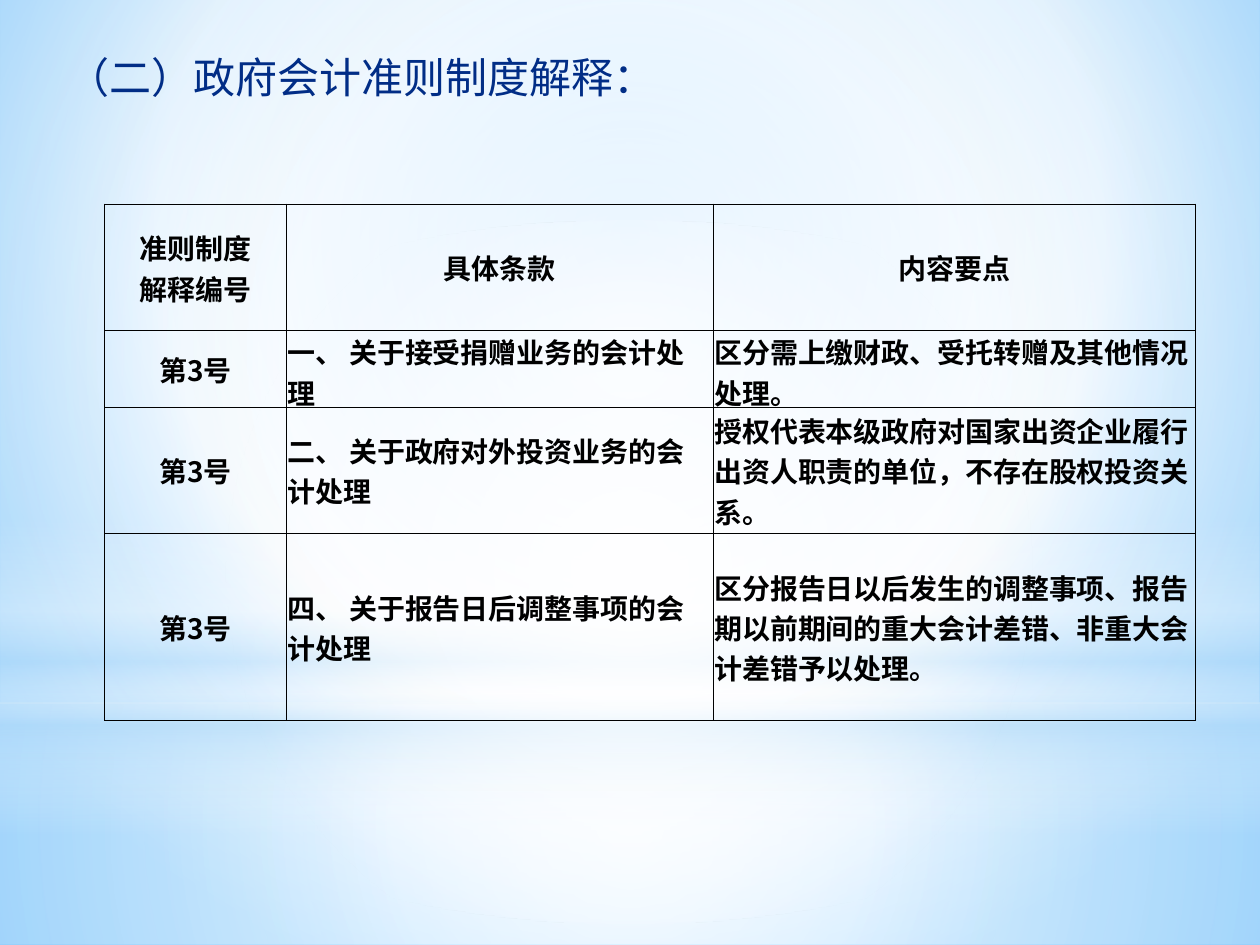
from dataclasses import dataclass

import pptx
import pptx.dml.color
import pptx.enum.shapes
import pptx.enum.text
import pptx.oxml
import pptx.oxml.ns
import pptx.util

WIDTH, HEIGHT = 10, 7.5
FONT = "Noto Sans CJK SC"
COLORS = {
    "white": "FFFFFF", "haze": "B4DCFA", "sky": "9ED5FF", "edge": "5BB9FF",
    "title_top": "012D86", "title_bottom": "0E2557", "ink": "000000",
}
SHAPE = pptx.enum.shapes.MSO_SHAPE
ALIGN = pptx.enum.text.PP_ALIGN
qn = pptx.oxml.ns.qn
NS = pptx.oxml.ns.nsdecls("a")
CENTER = (50, 50, 50, 50)


@dataclass
class Stop:
    position: int
    color: str
    alpha: int = 100


@dataclass
class Gradient:
    """Linear at an angle, or circular when a focus (left, top, right, bottom) is given."""
    stops: list[Stop]
    angle: int = 90
    focus: tuple[int, int, int, int] | None = None


@dataclass
class Glow:
    """A backdrop layer across the slide; top and height are shares of its height."""
    kind: int
    top: float
    height: float
    gradient: Gradient


HORIZON = 0.744
BACKGROUND = Gradient([Stop(0, "sky"), Stop(60, "white"), Stop(100, "edge")],
                      focus=(20, 10, 20, 60))
GLOWS = [
    Glow(SHAPE.RECTANGLE, HORIZON, 1 - HORIZON, Gradient(
        [Stop(0, "white", 91), Stop(37, "white", 76), Stop(100, "haze", 79)], focus=CENTER)),
    Glow(SHAPE.RECTANGLE, 0, HORIZON, Gradient(
        [Stop(0, "white", 89), Stop(48, "white", 62), Stop(100, "haze", 79)], focus=CENTER)),
    Glow(SHAPE.RECTANGLE, 0.55, 1 / 3, Gradient(
        [Stop(0, "white", 0), Stop(29, "white", 30), Stop(45, "haze", 40),
         Stop(55, "white", 26), Stop(65, "haze", 60), Stop(100, "white", 0)])),
    Glow(SHAPE.OVAL, 0.233, HORIZON, Gradient(
        [Stop(0, "white"), Stop(56, "white", 0)], focus=CENTER)),
]
TITLE_GRADIENT = Gradient([Stop(0, "title_top"), Stop(100, "title_bottom")])

COLUMNS = [1.44, 3.39, 3.83]
ROWS = [1, 0.61, 1, 1.49]
CELLS = [
    ["准则制度\n解释编号", "具体条款", "内容要点"],
    ["第3号", "一、 关于接受捐赠业务的会计处理",
     "区分需上缴财政、受托转赠及其他情况处理。"],
    ["第3号", "二、 关于政府对外投资业务的会计处理",
     "授权代表本级政府对国家出资企业履行出资人职责的单位，不存在股权投资关系。"],
    ["第3号", "四、 关于报告日后调整事项的会计处理",
     "区分报告日以后发生的调整事项、报告\n期以前期间的重大会计差错、非重大会计差错予以处理。"],
]


def inches(value: float) -> int:
    return pptx.util.Inches(value)


def set_gradient(parent, gradient: Gradient) -> None:
    """Swap the noFill of a properties element for a gradient."""
    stops = "".join(
        f'<a:gs pos="{s.position * 1000}"><a:srgbClr val="{COLORS[s.color]}">'
        f'<a:alpha val="{s.alpha * 1000}"/></a:srgbClr></a:gs>' for s in gradient.stops)
    if gradient.focus:
        sides = " ".join(f'{side}="{share * 1000}"'
                         for side, share in zip("ltrb", gradient.focus))
        shade = f'<a:path path="circle"><a:fillToRect {sides}/></a:path>'
    else:
        shade = f'<a:lin ang="{gradient.angle * 60000}" scaled="0"/>'
    fill = pptx.oxml.parse_xml(
        f'<a:gradFill {NS} rotWithShape="1"><a:gsLst>{stops}</a:gsLst>{shade}</a:gradFill>')
    parent.replace(parent.find(qn("a:noFill")), fill)


def set_font(p, size: int):
    """Set size and typeface for Latin and East Asian text; return the properties element."""
    p.font.size = pptx.util.Pt(size)
    p.font.name = FONT
    props = p._p.pPr.find(qn("a:defRPr"))
    props.append(pptx.oxml.parse_xml(f'<a:ea {NS} typeface="{FONT}"/>'))
    return props


def draw_background(slide) -> None:
    slide.background.fill.background()
    set_gradient(slide._element.find(".//" + qn("p:bgPr")), BACKGROUND)


def draw_glow(slide, glow: Glow) -> None:
    sp = slide.shapes.add_shape(glow.kind, 0, inches(glow.top * HEIGHT),
                                inches(WIDTH), inches(glow.height * HEIGHT))
    sp.shadow.inherit = False
    sp.line.fill.background()
    sp.fill.background()
    set_gradient(sp._element.spPr, glow.gradient)


def draw_title(slide, text: str) -> None:
    sp = slide.shapes.add_textbox(inches(0.44), inches(0.36), inches(4.63), inches(0.5))
    tf = sp.text_frame
    tf.word_wrap = False
    tf.auto_size = pptx.enum.text.MSO_AUTO_SIZE.SHAPE_TO_FIT_TEXT
    p = tf.paragraphs[0]
    p.text = text
    props = set_font(p, 24)
    p.font.fill.background()
    set_gradient(props, TITLE_GRADIENT)


def set_borders(cell) -> None:
    props = cell._tc.get_or_add_tcPr()
    for i, side in enumerate("LRTB"):
        props.insert(i, pptx.oxml.parse_xml(
            f'<a:ln{side} {NS} w="6350"><a:solidFill><a:srgbClr val="{COLORS["ink"]}"/>'
            f'</a:solidFill></a:ln{side}>'))


def fill_cell(cell, text: str, centered: bool) -> None:
    cell.fill.background()
    cell.margin_left = cell.margin_right = cell.margin_top = inches(0.01)
    cell.margin_bottom = 0
    cell.vertical_anchor = pptx.enum.text.MSO_ANCHOR.MIDDLE
    p = cell.text_frame.paragraphs[0]
    p.text = text
    p.alignment = ALIGN.CENTER if centered else ALIGN.LEFT
    set_font(p, 16)
    p.font.bold = True
    p.font.color.rgb = pptx.dml.color.RGBColor.from_string(COLORS["ink"])
    set_borders(cell)


def draw_table(slide) -> None:
    table = slide.shapes.add_table(
        len(ROWS), len(COLUMNS), inches(0.83), inches(1.62),
        inches(sum(COLUMNS)), inches(sum(ROWS))).table
    table.first_row = table.horz_banding = False
    for column, width in zip(table.columns, COLUMNS):
        column.width = inches(width)
    for r, (row, height) in enumerate(zip(table.rows, ROWS)):
        row.height = inches(height)
        for c, cell in enumerate(row.cells):
            fill_cell(cell, CELLS[r][c], centered=r == 0 or c == 0)


def main() -> None:
    prs = pptx.Presentation()
    prs.slide_width, prs.slide_height = inches(WIDTH), inches(HEIGHT)
    slide = prs.slides.add_slide(prs.slide_layouts[6])
    draw_background(slide)
    for glow in GLOWS:
        draw_glow(slide, glow)
    draw_title(slide, "（二）政府会计准则制度解释：")
    draw_table(slide)
    prs.save("out.pptx")


if __name__ == "__main__":
    main()
